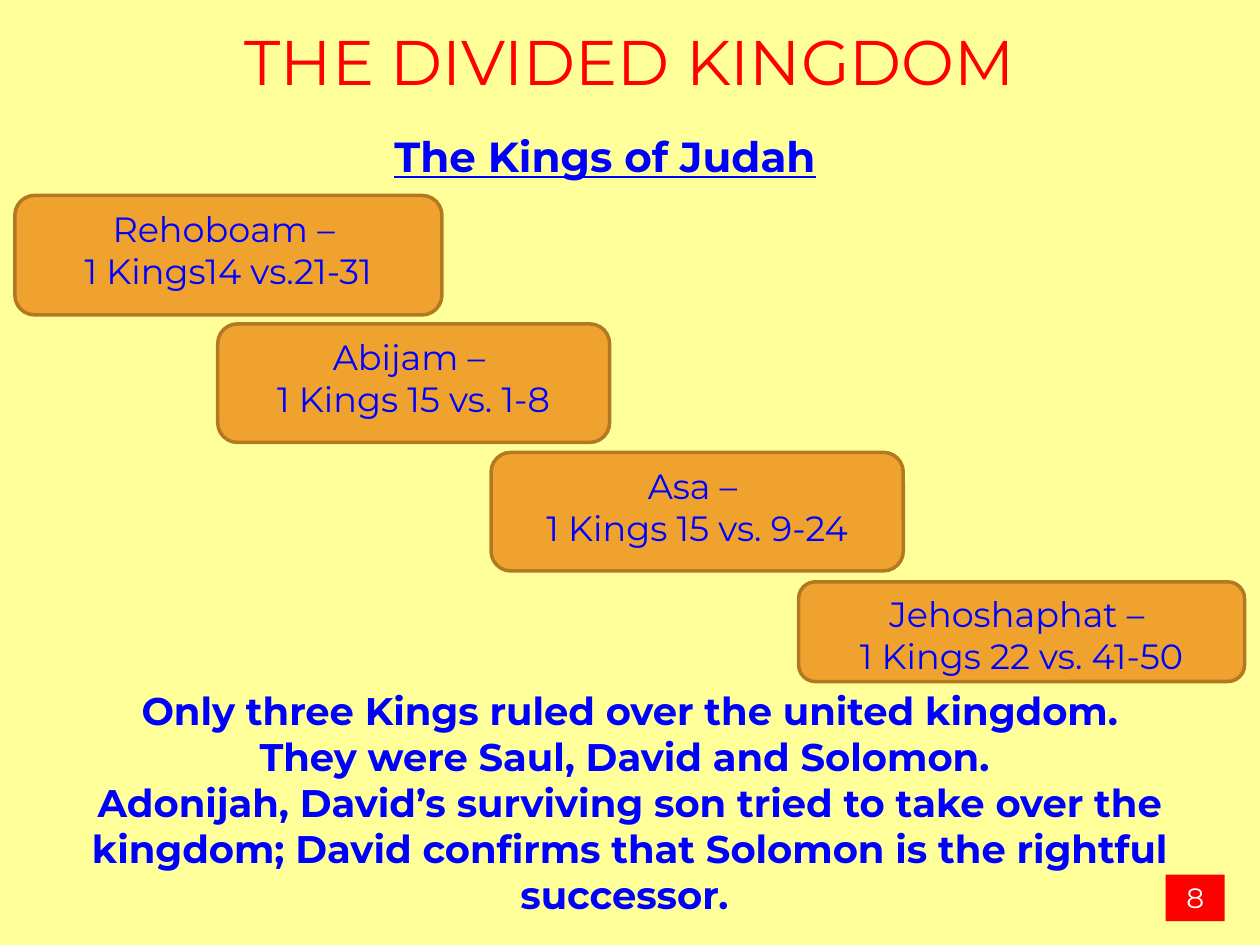
from pptx import Presentation
from pptx.dml.color import RGBColor
from pptx.enum.shapes import MSO_SHAPE
from pptx.enum.text import MSO_ANCHOR, PP_ALIGN
from pptx.util import Cm, Pt

FONT = "Montserrat"
YELLOW = RGBColor(0xFF, 0xFF, 0x99)
RED = RGBColor(0xFF, 0x00, 0x00)
BLUE = RGBColor(0x00, 0x00, 0xFF)
WHITE = RGBColor(0xFF, 0xFF, 0xFF)
ORANGE = RGBColor(0xF0, 0xA2, 0x2E)
BROWN = RGBColor(0xB2, 0x78, 0x22)

# Each king: lines of text, then left, top, width, height in cm
KINGS = [
    (["Rehoboam – ", "1 Kings14 vs.21-31"], (0.3, 3.94, 8.61, 2.41)),
    (["Abijam – ", "1 Kings 15 vs. 1-8"], (4.39, 6.53, 7.9, 2.39)),
    (["Asa – ", "1 Kings 15 vs. 9-24"], (9.9, 9.12, 8.31, 2.39)),
    (["Jehoshaphat – ", "1 Kings 22 vs. 41-50"], (16.1, 11.73, 8.99, 2.01)),
]
SUMMARY = [
    "Only three Kings ruled over the united kingdom.",
    "They were Saul, David and Solomon. ",
    "Adonijah, David’s surviving son tried to take over the kingdom; "
    "David confirms that Solomon is the rightful successor. ",
]


def write_lines(sp, lines, size, color, bold=False, underline=False,
                align=PP_ALIGN.CENTER):
    tf = sp.text_frame
    tf.word_wrap = True
    tf.vertical_anchor = MSO_ANCHOR.TOP
    for i, line in enumerate(lines):
        p = tf.add_paragraph() if i else tf.paragraphs[0]
        p.alignment = align
        r = p.add_run()
        r.text = line
        r.font.name = FONT
        r.font.size = Pt(size)
        r.font.bold = bold
        r.font.underline = underline
        r.font.color.rgb = color


def add_text(s, box, lines, size, color, **style):
    sp = s.shapes.add_textbox(*map(Cm, box))
    write_lines(sp, lines, size, color, **style)


def add_box(s, kind, box, fill, line=None):
    sp = s.shapes.add_shape(kind, *map(Cm, box))
    sp.shadow.inherit = False
    sp.fill.solid()
    sp.fill.fore_color.rgb = fill
    if line is None:
        sp.line.fill.background()
    else:
        sp.line.color.rgb = line
        sp.line.width = Pt(2)
    return sp


def add_king(s, box, lines):
    sp = add_box(s, MSO_SHAPE.ROUNDED_RECTANGLE, box, ORANGE, BROWN)
    write_lines(sp, lines, 20, BLUE)


def add_page_number(s, box, number):
    sp = add_box(s, MSO_SHAPE.RECTANGLE, box, RED)
    write_lines(sp, [number], 16, WHITE)


def main():
    prs = Presentation()
    prs.slide_width, prs.slide_height = Cm(25.4), Cm(19.05)
    s = prs.slides.add_slide(prs.slide_layouts[6])
    s.background.fill.solid()
    s.background.fill.fore_color.rgb = YELLOW

    add_text(s, (0, 0.33, 25.4, 1.8), ["THE DIVIDED KINGDOM"], 36, RED)
    add_text(s, (7.7, 2.51, 9.91, 1.3), ["The Kings of Judah"], 24, BLUE,
             bold=True, underline=True, align=PP_ALIGN.LEFT)
    for lines, box in KINGS:
        add_king(s, box, lines)
    add_text(s, (0, 13.72, 25.4, 4.95), SUMMARY, 22, BLUE, bold=True)
    add_page_number(s, (23.5, 17.63, 1.19, 0.94), "8")
    prs.save("out.pptx")


if __name__ == "__main__":
    main()
